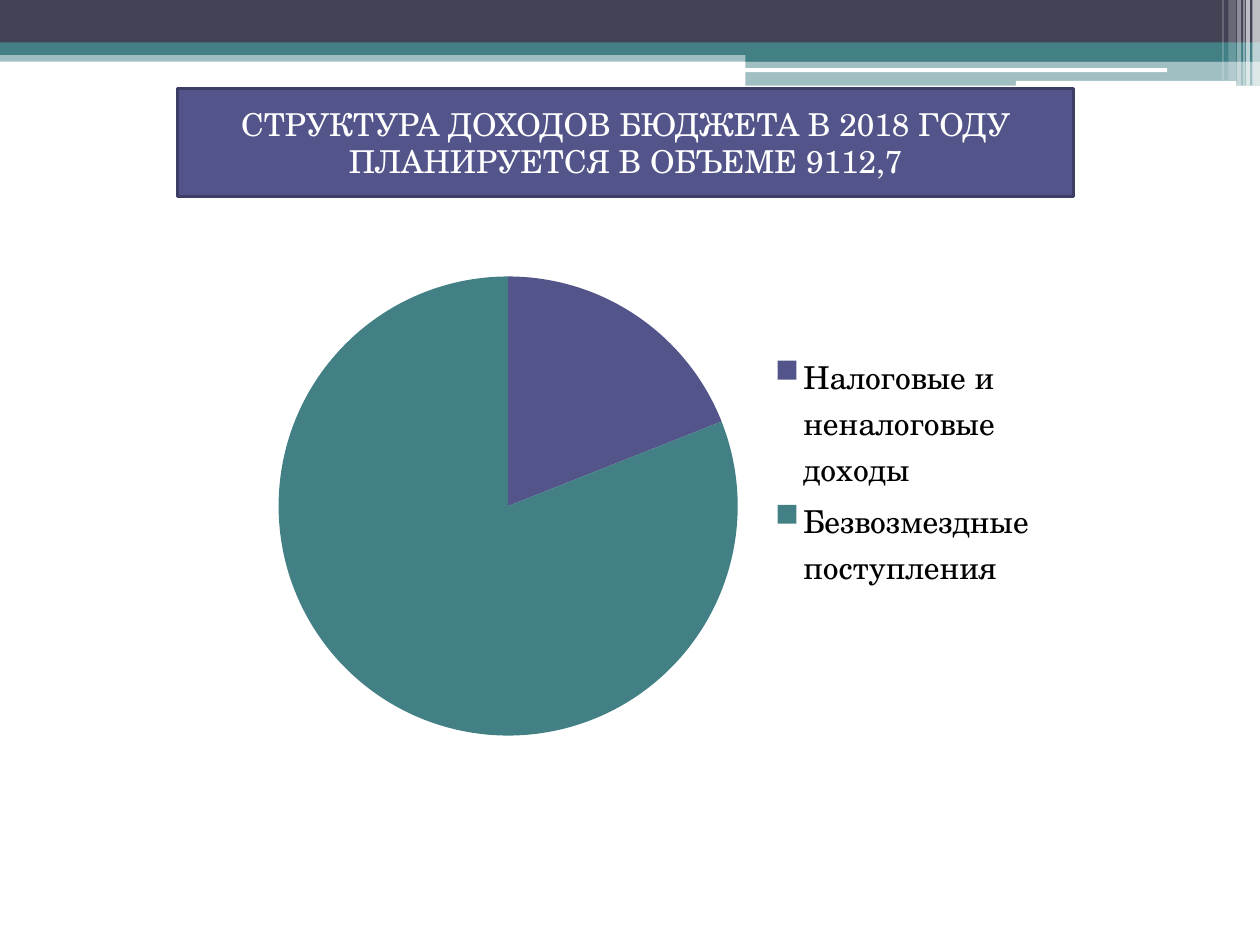
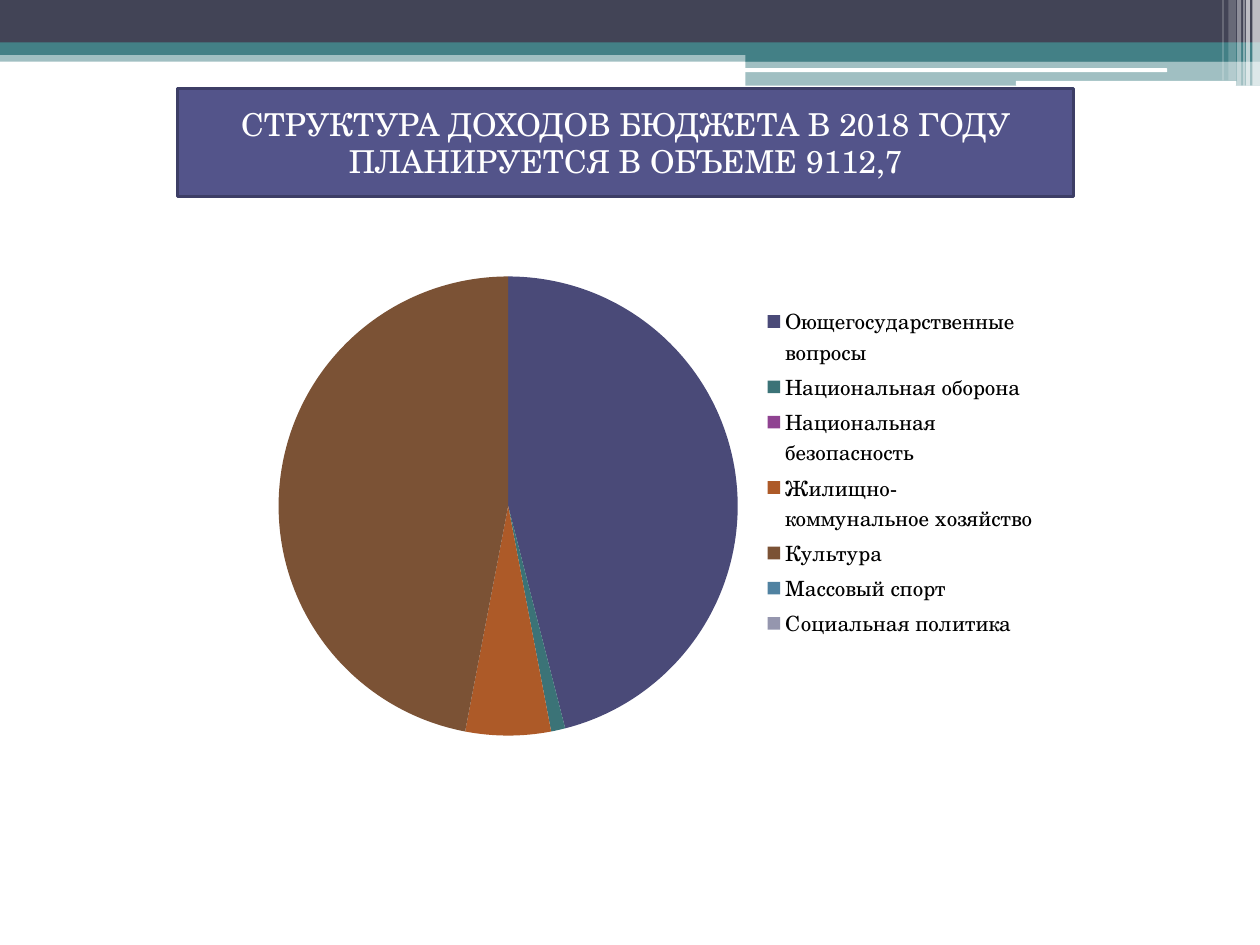
from dataclasses import dataclass

from lxml.etree import SubElement
from pptx import Presentation
from pptx.chart.data import CategoryChartData
from pptx.dml.color import RGBColor
from pptx.enum.chart import XL_CHART_TYPE, XL_LEGEND_POSITION
from pptx.enum.shapes import MSO_SHAPE
from pptx.enum.text import MSO_ANCHOR, MSO_AUTO_SIZE, PP_ALIGN
from pptx.oxml import parse_xml
from pptx.oxml.ns import nsdecls, qn
from pptx.slide import Slide
from pptx.util import Pt

FONT = "TeX Gyre Schola"
COLORS = {
    "dark": "424456",
    "teal": "438086",
    "violet": "53548A",
    "edge": "3D3E66",
    "white": "FFFFFF",
    "black": "000000",
    "deep violet": "4A4A78",
    "deep teal": "3B7377",
    "purple": "8F4391",
    "orange": "AD5A28",
    "brown": "7B5235",
    "blue": "5082A1",
    "gray": "9596AE",
}
TITLE = "СТРУКТУРА ДОХОДОВ БЮДЖЕТА В 2018 ГОДУ ПЛАНИРУЕТСЯ В ОБЪЕМЕ 9112,7"
PLOT_AREA = {"x": 0.08, "y": 0.15, "w": 0.55, "h": 0.82}


@dataclass(frozen=True)
class Band:
    left: float
    top: float
    width: float
    height: float
    color: str
    alpha: int = 100
    rounded: bool = False


@dataclass(frozen=True)
class Slice:
    label: str
    value: int
    color: str


@dataclass(frozen=True)
class Pie:
    legend_size: int
    slices: tuple[Slice, ...]


BANDS = (
    Band(0, 28.8, 720, 6.5, "teal", 50),
    Band(0, 0, 720, 24.5, "dark"),
    Band(0, 24.2, 720, 7.2, "teal"),
    Band(426, 28, 294, 7.2, "teal"),
    Band(426, 34.8, 294, 14.2, "teal", 50),
    Band(425.5, 39, 241.5, 2.2, "white", rounded=True),
    Band(580.5, 46.2, 126, 2.8, "white", rounded=True),
    Band(715.7, 0, 4.3, 49, "white", 65),
    Band(712, 0, 2.2, 49, "white", 65),
    Band(710.5, 0, 0.7, 49, "white", 60),
    Band(707, 0, 2.2, 49, "white", 40),
    Band(702, 0, 4.3, 46, "white", 20),
    Band(698.5, 0, 0.7, 46, "white", 30),
)
PIES = (
    Pie(18, (
        Slice("Налоговые и неналоговые доходы", 19, "violet"),
        Slice("Безвозмездные поступления", 81, "teal"),
    )),
    Pie(12, (
        Slice("Оющегосударственные вопросы", 46, "deep violet"),
        Slice("Национальная оборона", 1, "deep teal"),
        Slice("Национальная безопасность", 0, "purple"),
        Slice("Жилищно-коммунальное хозяйство", 6, "orange"),
        Slice("Культура", 47, "brown"),
        Slice("Массовый спорт", 0, "blue"),
        Slice("Социальная политика", 0, "gray"),
    )),
)


def rgb(name: str) -> RGBColor:
    """Return a named colour."""
    return RGBColor.from_string(COLORS[name])


def add_band(s: Slide, band: Band):
    """Draw one band and return its shape."""
    kind = MSO_SHAPE.ROUNDED_RECTANGLE if band.rounded else MSO_SHAPE.RECTANGLE
    sp = s.shapes.add_shape(
        kind, Pt(band.left), Pt(band.top), Pt(band.width), Pt(band.height))
    sp.shadow.inherit = False
    sp.fill.solid()
    sp.fill.fore_color.rgb = rgb(band.color)
    sp.line.fill.background()
    if band.alpha < 100:
        color = sp.element.spPr.find(f"{qn('a:solidFill')}/{qn('a:srgbClr')}")
        SubElement(color, qn("a:alpha"), val=str(band.alpha * 1000))
    return sp


def add_master_bands(s: Slide) -> None:
    """Put the header bands on the master of a slide."""
    tree = s.slide_layout.slide_master.shapes.element
    for number, band in enumerate(BANDS, 101):
        element = add_band(s, band).element
        element.nvSpPr.cNvPr.set("id", str(number))
        tree.append(element)


def format_title(s: Slide) -> None:
    """Fill and place the title box."""
    sp = s.shapes.title
    sp.left, sp.top, sp.width, sp.height = Pt(101.5), Pt(50.4), Pt(512), Pt(62)
    sp.fill.solid()
    sp.fill.fore_color.rgb = rgb("violet")
    sp.line.color.rgb = rgb("edge")
    sp.line.width = Pt(1.5)
    tf = sp.text_frame
    tf.text = TITLE
    tf.word_wrap = True
    tf.auto_size = MSO_AUTO_SIZE.NONE
    tf.vertical_anchor = MSO_ANCHOR.MIDDLE
    p = tf.paragraphs[0]
    p.alignment = PP_ALIGN.CENTER
    p.font.name, p.font.size = FONT, Pt(18)
    p.font.color.rgb = rgb("white")


def set_plot_layout(chart) -> None:
    """Fix the inner plot area of a chart."""
    area = chart.element.chart.plotArea
    for old in area.findall(qn("c:layout")):
        area.remove(old)
    sizes = "".join(f'<c:{k} val="{v}"/>' for k, v in PLOT_AREA.items())
    area.insert(0, parse_xml(
        f'<c:layout {nsdecls("c")}><c:manualLayout>'
        '<c:layoutTarget val="inner"/><c:xMode val="edge"/><c:yMode val="edge"/>'
        f"{sizes}</c:manualLayout></c:layout>"))


def add_pie(s: Slide, pie: Pie) -> None:
    """Add a pie chart with its legend."""
    data = CategoryChartData()
    data.categories = [part.label for part in pie.slices]
    data.add_series("Series 1", [part.value for part in pie.slices])
    chart = s.shapes.add_chart(
        XL_CHART_TYPE.PIE, Pt(120), Pt(110), Pt(480), Pt(320), data).chart
    chart.has_title = False
    chart.font.name, chart.font.size = FONT, Pt(18)
    chart.font.color.rgb = rgb("black")
    chart.has_legend = True
    legend = chart.legend
    legend.position = XL_LEGEND_POSITION.RIGHT
    legend.include_in_layout = True
    legend.font.name, legend.font.size = FONT, Pt(pie.legend_size)
    legend.font.color.rgb = rgb("black")
    plot = chart.plots[0]
    plot.vary_by_categories = True
    for i, part in enumerate(pie.slices):
        fmt = plot.series[0].points[i].format
        fmt.fill.solid()
        fmt.fill.fore_color.rgb = rgb(part.color)
        fmt.line.fill.background()
    set_plot_layout(chart)


def main() -> None:
    """Build both slides and save the file."""
    prs = Presentation()
    prs.slide_width, prs.slide_height = Pt(720), Pt(540)
    for pie in PIES:
        s = prs.slides.add_slide(prs.slide_layouts[5])
        format_title(s)
        add_pie(s, pie)
    add_master_bands(prs.slides[0])
    prs.save("out.pptx")


if __name__ == "__main__":
    main()
